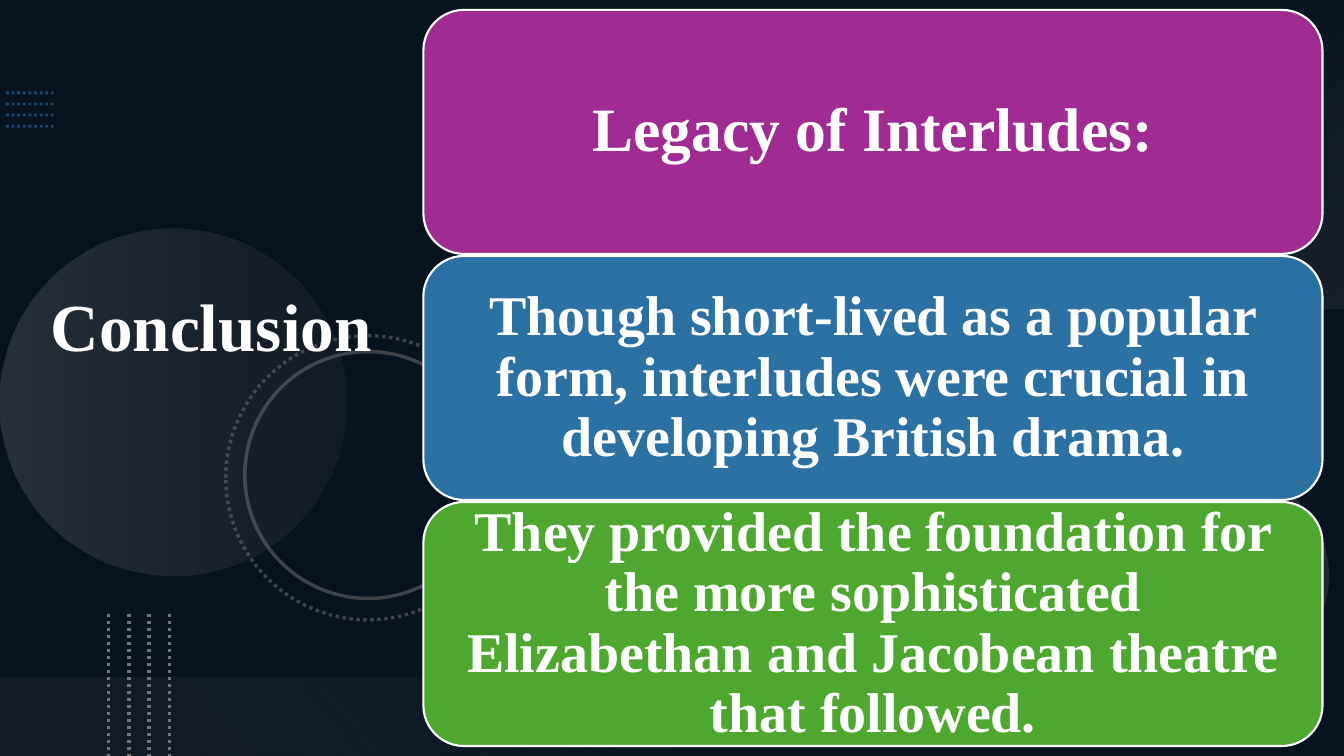
import pptx
import pptx.dml.color
import pptx.enum.dml
import pptx.enum.shapes
import pptx.enum.text
import pptx.oxml
import pptx.oxml.ns
import pptx.util

Cm, Pt = pptx.util.Cm, pptx.util.Pt
SHAPES = pptx.enum.shapes.MSO_SHAPE
MIDDLE = pptx.enum.text.MSO_ANCHOR.MIDDLE
DOTTED = pptx.enum.dml.MSO_LINE.ROUND_DOT
FONT = "Times New Roman"
COLOURS = {
    "navy": "0E2841", "black": "000000", "white": "FFFFFF", "blue_dots": "2D7FCF",
    "grey": "747474", "silver": "AEAEAE",
    "purple": "A02B93", "blue": "2C71A4", "green": "4EA72E",
}
CARDS = [
    ("Legacy of Interludes:", "purple", 44),
    ("Though short-lived as a popular form, interludes were crucial in "
     "developing British drama.", "blue", 40),
    ("They provided the foundation for the more sophisticated Elizabethan "
     "and Jacobean theatre that followed.", "green", 40),
]


def rgb(name):
    return pptx.dml.color.RGBColor.from_string(COLOURS[name])


def set_opacity(shape, *percents):
    """Give the shape's colours, in document order, these opacities."""
    colours = shape._element.spPr.iter(pptx.oxml.ns.qn("a:srgbClr"))
    for colour, percent in zip(colours, percents):
        alpha = pptx.oxml.parse_xml(
            f'<a:alpha {pptx.oxml.ns.nsdecls("a")} val="{percent * 1000}"/>')
        colour.append(alpha)


def add_plain_shape(slide, kind, left, top, width, height):
    shape = slide.shapes.add_shape(kind, Cm(left), Cm(top), Cm(width), Cm(height))
    shape.shadow.inherit = False
    shape.fill.background()
    shape.line.fill.background()
    return shape


def add_gradient_shape(slide, kind, box, stops, angle):
    shape = add_plain_shape(slide, kind, *box)
    shape.fill.gradient()
    shape.fill.gradient_angle = angle
    for stop, (position, colour, _) in zip(shape.fill.gradient_stops, stops):
        stop.position = position
        stop.color.rgb = rgb(colour)
    set_opacity(shape, *(opacity for _, _, opacity in stops))


def add_ring(slide, left, top, size, dash=None):
    ring = add_plain_shape(slide, SHAPES.OVAL, left, top, size, size)
    ring.line.color.rgb = rgb("grey")
    ring.line.width = Pt(2.5)
    ring.line.dash_style = dash
    set_opacity(ring, 50)


def add_dotted_line(slide, start, end, colour, width, opacity):
    line = slide.shapes.add_connector(
        pptx.enum.shapes.MSO_CONNECTOR.STRAIGHT,
        Cm(start[0]), Cm(start[1]), Cm(end[0]), Cm(end[1]))
    line.line.color.rgb = rgb(colour)
    line.line.width = Pt(width)
    line.line.dash_style = DOTTED
    set_opacity(line, opacity)
    line._element.spPr.append(pptx.oxml.parse_xml(
        f'<a:effectLst {pptx.oxml.ns.nsdecls("a")}/>'))


def write_text(text_frame, text, size):
    text_frame.word_wrap = True
    text_frame.vertical_anchor = MIDDLE
    paragraph = text_frame.paragraphs[0]
    paragraph.alignment = pptx.enum.text.PP_ALIGN.CENTER
    paragraph.line_spacing = 0.9
    run = paragraph.add_run()
    run.text = text
    run.font.name = FONT
    run.font.size = Pt(size)
    run.font.bold = True
    run.font.color.rgb = rgb("white")


def add_backdrop(slide, width, height):
    slide.background.fill.solid()
    slide.background.fill.fore_color.rgb = rgb("navy")
    shade = add_plain_shape(slide, SHAPES.RECTANGLE, 0, 0, width, height)
    shade.fill.solid()
    shade.fill.fore_color.rgb = rgb("black")
    set_opacity(shade, 53)

    for row in range(4):
        y = 2.34 + row * 0.28
        add_dotted_line(slide, (0.15, y), (1.35, y), "blue_dots", 2, 50)

    add_gradient_shape(slide, SHAPES.OVAL, (0, 5.77, 8.74, 8.74),
                       [(0, "silver", 20), (1, "grey", 10)], 0)
    add_gradient_shape(slide, SHAPES.OVAL, (28.19, 11.86, 5.28, 5.28),
                       [(0, "silver", 10), (1, "silver", 20)], 60)
    add_ring(slide, 5.69, 8.46, 7.16, DOTTED)
    add_ring(slide, 6.17, 8.86, 6.22)

    band = 1.98
    add_gradient_shape(slide, SHAPES.RECTANGLE, (width - band, 0, band, 7.77),
                       [(0, "white", 0), (1, "silver", 10)], 310)
    add_gradient_shape(slide, SHAPES.RECTANGLE, (0, height - band, width / 2, band),
                       [(0.1, "grey", 10), (1, "white", 0)], 40)

    for column in range(4):
        x = 2.74 + column * 0.51
        add_dotted_line(slide, (x, 15.47), (x, height), "grey", 2.5, 100)


def place_title(slide, left, top, width, height):
    title = slide.shapes.title
    title.left, title.top, title.width, title.height = map(
        Cm, (left, top, width, height))
    title.text_frame.margin_bottom = Cm(2.3)
    write_text(title.text_frame, "Conclusion", 48)
    title._element.getparent().append(title._element)  # in front of the backdrop


def add_cards(slide, left, top, width, height):
    gap = 0.05
    card_height = (height - gap * (len(CARDS) - 1)) / len(CARDS)
    for index, (text, colour, size) in enumerate(CARDS):
        card = add_plain_shape(slide, SHAPES.ROUNDED_RECTANGLE, left,
                               top + index * (card_height + gap), width, card_height)
        card.fill.solid()
        card.fill.fore_color.rgb = rgb(colour)
        card.line.color.rgb = rgb("white")
        card.line.width = Pt(1.5)
        frame = card.text_frame
        frame.margin_left = frame.margin_right = Cm(0.7)
        frame.margin_top = frame.margin_bottom = 0
        write_text(frame, text, size)


def main():
    width, height = 33.87, 19.05
    presentation = pptx.Presentation()
    presentation.slide_width = Cm(width)
    presentation.slide_height = Cm(height)
    slide = presentation.slides.add_slide(presentation.slide_layouts[5])
    add_backdrop(slide, width, height)
    place_title(slide, 0.79, 0, 9.07, 18.8)
    add_cards(slide, 10.67, 0.25, 22.66, 18.55)
    presentation.save("out.pptx")


if __name__ == "__main__":
    main()
